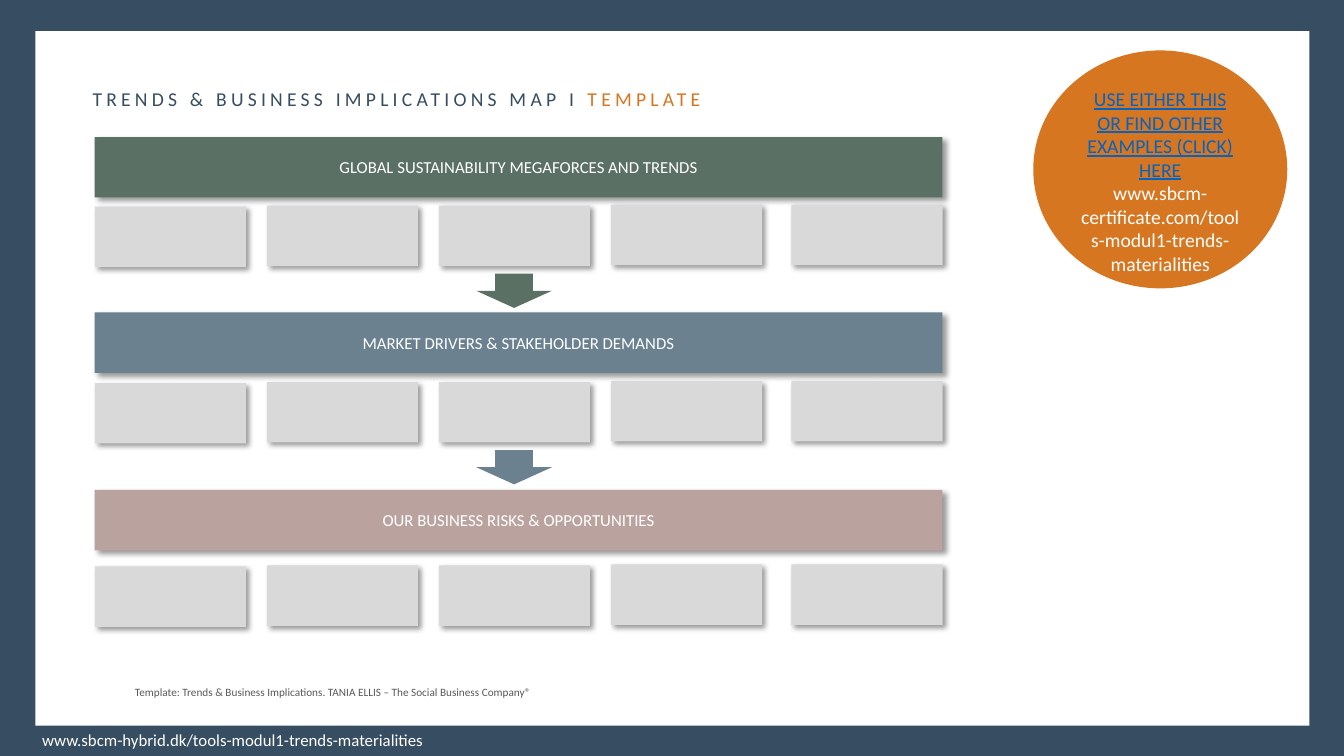
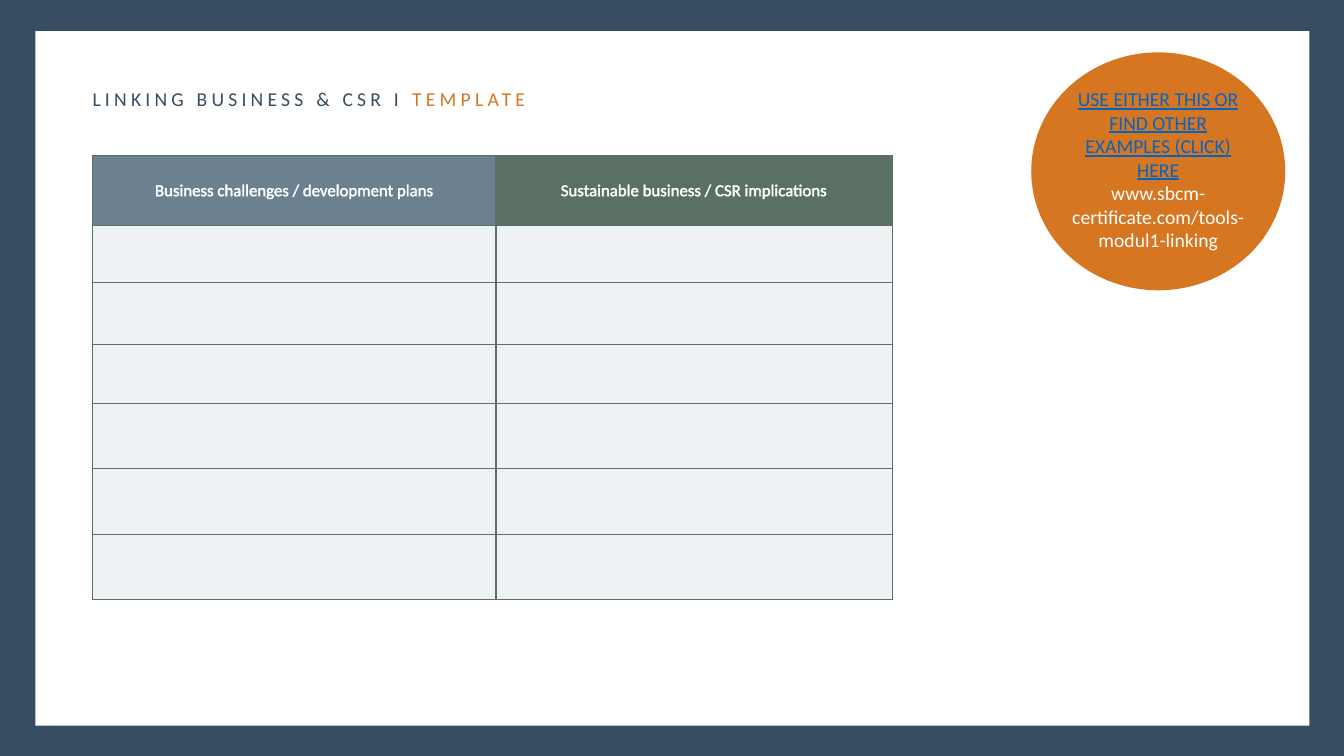
"""Build two sustainability template slides."""
from pptx import Presentation
from pptx.dml.color import RGBColor
from pptx.enum.shapes import MSO_SHAPE
from pptx.enum.text import MSO_ANCHOR, PP_ALIGN
from pptx.oxml import parse_xml
from pptx.oxml.ns import nsdecls, qn
from pptx.util import Inches, Pt

NAVY = RGBColor(0x37, 0x4D, 0x62)
ORANGE = RGBColor(0xD7, 0x76, 0x21)
GREEN = RGBColor(0x5B, 0x70, 0x65)
SLATE = RGBColor(0x6B, 0x81, 0x90)
ROSE = RGBColor(0xBA, 0xA3, 0x9F)
CARD_GREY = RGBColor(0xD9, 0xD9, 0xD9)
NOTE_GREY = RGBColor(0x59, 0x59, 0x59)
CELL_TINT = RGBColor(0xEF, 0xF2, 0xF5)
LINK_BLUE = RGBColor(0x05, 0x63, 0xC1)
WHITE = RGBColor(0xFF, 0xFF, 0xFF)

FONT = "Calibri"
SLIDE_WIDTH, SLIDE_HEIGHT = Inches(13.33), Inches(7.5)
COLUMN, ROW = SLIDE_WIDTH / 100, SLIDE_HEIGHT / 100

BAND_LEFT, BAND_WIDTH, BAND_HEIGHT = 7.05, 63.08, 8
CARD_COUNT, CARD_WIDTH, CARD_PITCH, CARD_RISE = 5, 11.25, 12.8, 0.13
ARROW_LEFT, ARROW_WIDTH, ARROW_HEIGHT, ARROW_OFFSET = 35.44, 5.63, 4.53, 8.87
BADGE_WIDTH, BADGE_HEIGHT = 18.9, 31.47

SECTIONS = [
    ("GLOBAL SUSTAINABILITY MEGAFORCES AND TRENDS", GREEN, 18.13, 27.33),
    ("MARKET DRIVERS & STAKEHOLDER DEMANDS", SLATE, 41.33, 50.67),
    ("OUR BUSINESS RISKS & OPPORTUNITIES", ROSE, 64.8, 74.93),
]
TABLE_HEADERS = [
    ("Business challenges / development plans", SLATE),
    ("Sustainable business / CSR implications", GREEN),
]
TABLE_COLUMNS = [30, 29.48]
TABLE_ROWS = [9.33, 7.47, 8.27, 7.73, 8.67, 8.67, 8.67]


def area(column, row, columns, rows):
    """Turn grid columns and rows into a left, top, width and height."""
    return [round(length) for length in
            (column * COLUMN, row * ROW, columns * COLUMN, rows * ROW)]


def set_attributes(target, values):
    """Set every attribute named in a dict."""
    for name, value in values.items():
        setattr(target, name, value)


def add_run(paragraph, text, color, size, spacing=0, **formats):
    """Append a formatted run and return its properties element."""
    run = paragraph.add_run()
    run.text = text
    set_attributes(run.font, {"name": FONT, "size": Pt(size), **formats})
    run.font.color.rgb = color
    properties = run._r.get_or_add_rPr()
    if spacing:
        properties.set("spc", str(spacing * 100))
    return properties


def add_text(slide, box, runs, size, spacing=0):
    """Add a one-paragraph text box from text and colour pairs."""
    frame = slide.shapes.add_textbox(*area(*box)).text_frame
    frame.word_wrap = True
    for text, color in runs:
        add_run(frame.paragraphs[0], text, color, size, spacing)


def add_solid(slide, kind, box, color, shadow=False):
    """Add a plain filled shape, with a soft shadow if asked."""
    shape = slide.shapes.add_shape(kind, *area(*box))
    shape.fill.solid()
    shape.fill.fore_color.rgb = color
    shape.line.fill.background()
    shape.shadow.inherit = False
    if shadow:
        effects = shape._element.spPr.find(qn("a:effectLst"))
        effects.append(parse_xml(
            f'<a:outerShdw {nsdecls("a")} blurRad="{Pt(4)}" dist="{Pt(3)}" '
            'dir="2700000" algn="tl" rotWithShape="0"><a:srgbClr val="000000">'
            '<a:alpha val="40000"/></a:srgbClr></a:outerShdw>'))
    return shape


def add_section(slide, heading, color, band_top, cards_top):
    """Add a heading band and its row of empty cards."""
    band = add_solid(slide, MSO_SHAPE.RECTANGLE,
                     (BAND_LEFT, band_top, BAND_WIDTH, BAND_HEIGHT), color, True)
    band.text_frame.vertical_anchor = MSO_ANCHOR.MIDDLE
    paragraph = band.text_frame.paragraphs[0]
    paragraph.alignment = PP_ALIGN.CENTER
    add_run(paragraph, heading, WHITE, 12)
    lefts = [BAND_LEFT + index * CARD_PITCH for index in range(CARD_COUNT - 1)]
    lefts.append(BAND_LEFT + BAND_WIDTH - CARD_WIDTH)
    for index, left in enumerate(lefts):
        top = cards_top - CARD_RISE * ((index + 1) // 2)
        add_solid(slide, MSO_SHAPE.RECTANGLE,
                  (left, top, CARD_WIDTH, BAND_HEIGHT), CARD_GREY, True)


def add_badge(slide, left, top, address_lines, margins):
    """Add the round badge with its link wording and address lines."""
    badge = add_solid(slide, MSO_SHAPE.OVAL,
                      (left, top, BADGE_WIDTH, BADGE_HEIGHT), ORANGE)
    frame = badge.text_frame
    names = ("margin_left", "margin_top", "margin_right", "margin_bottom")
    set_attributes(frame, dict(zip(names, map(Inches, margins))))
    set_attributes(frame, {"word_wrap": True, "vertical_anchor": MSO_ANCHOR.MIDDLE})
    link, address = frame.paragraphs[0], frame.add_paragraph()
    link.alignment = address.alignment = PP_ALIGN.CENTER
    add_run(link, "USE EITHER THIS OR FIND OTHER EXAMPLES (CLICK) HERE",
            LINK_BLUE, 14, underline=True)
    for index, line in enumerate(address_lines):
        if index:
            address.add_line_break()
        add_run(address, line, WHITE, 14)


def style_cell(cell, color):
    """Fill a cell and draw its four borders."""
    properties = cell._tc.get_or_add_tcPr()
    for side in ("lnL", "lnR", "lnT", "lnB"):
        properties.append(parse_xml(
            f'<a:{side} {nsdecls("a")} w="{Pt(1)}"><a:solidFill>'
            f'<a:srgbClr val="{GREEN}"/></a:solidFill></a:{side}>'))
    cell.fill.solid()
    cell.fill.fore_color.rgb = color
    cell.vertical_anchor = MSO_ANCHOR.MIDDLE


def add_header(cell, text):
    """Write a centred header whose letters have a white outline."""
    paragraph = cell.text_frame.paragraphs[0]
    paragraph.alignment = PP_ALIGN.CENTER
    properties = add_run(paragraph, text, WHITE, 12, bold=False)
    properties.insert(0, parse_xml(
        f'<a:ln {nsdecls("a")} w="{Pt(0.75)}"><a:solidFill>'
        f'<a:srgbClr val="{WHITE}"/></a:solidFill></a:ln>'))


def add_linking_table(slide):
    """Add the two-column table with empty rows to fill in."""
    box = area(6.9, 20.53, sum(TABLE_COLUMNS), sum(TABLE_ROWS))
    table = slide.shapes.add_table(len(TABLE_ROWS), len(TABLE_COLUMNS), *box).table
    set_attributes(table, {"first_row": False, "horz_banding": False})
    for column, width in zip(table.columns, TABLE_COLUMNS):
        column.width = round(width * COLUMN)
    for row, height in zip(table.rows, TABLE_ROWS):
        row.height = round(height * ROW)
    for column, (text, color) in enumerate(TABLE_HEADERS):
        for row in range(len(TABLE_ROWS)):
            style_cell(table.cell(row, column), CELL_TINT if row else color)
        add_header(table.cell(0, column), text)


def start_slide(presentation, title):
    """Add a blank slide with the white panel and the title."""
    slide = presentation.slides.add_slide(presentation.slide_layouts[6])
    add_solid(slide, MSO_SHAPE.RECTANGLE, (2.63, 4.13, 94.8, 91.87), WHITE)
    add_text(slide, (6.15, 10.8, 84.4, 4.53),
             [(f"{title} I ", NAVY), ("TEMPLATE", ORANGE)], 14, spacing=3)
    return slide


def build_trends_slide(presentation):
    """Build the trends and implications map."""
    slide = start_slide(presentation, "TRENDS & BUSINESS IMPLICATIONS MAP")
    for section in SECTIONS:
        add_section(slide, *section)
    for _, color, _, cards_top in SECTIONS[:-1]:
        add_solid(slide, MSO_SHAPE.DOWN_ARROW,
                  (ARROW_LEFT, cards_top + ARROW_OFFSET, ARROW_WIDTH, ARROW_HEIGHT),
                  color)
    add_badge(slide, 76.88, 6.67,
              ["www.sbcm-", "certificate.com/tool", "s-modul1-trends-",
               "materialities"],
              (0.1, 0.28, 0.1, 0.05))
    add_text(slide, (9.3, 90, 40.73, 3.2),
             [("Template: Trends & Business Implications. "
               "TANIA ELLIS – The Social Business Company®", NOTE_GREY)], 8)
    add_text(slide, (2.4, 95.87, 50, 4),
             [("www.sbcm-hybrid.dk/tools-modul1-trends-materialities", WHITE)], 12)


def build_linking_slide(presentation):
    """Build the business and CSR linking table."""
    slide = start_slide(presentation, "LINKING BUSINESS & CSR")
    add_linking_table(slide)
    add_badge(slide, 76.73, 6.93,
              ["www.sbcm-certificate.com/tools-modul1-linking"], (0, 0, 0, 0.04))


def main():
    """Create and save the presentation."""
    presentation = Presentation()
    set_attributes(presentation,
                   {"slide_width": SLIDE_WIDTH, "slide_height": SLIDE_HEIGHT})
    background = presentation.slide_master.background.fill
    background.solid()
    background.fore_color.rgb = NAVY
    build_trends_slide(presentation)
    build_linking_slide(presentation)
    presentation.save("out.pptx")


if __name__ == "__main__":
    main()
